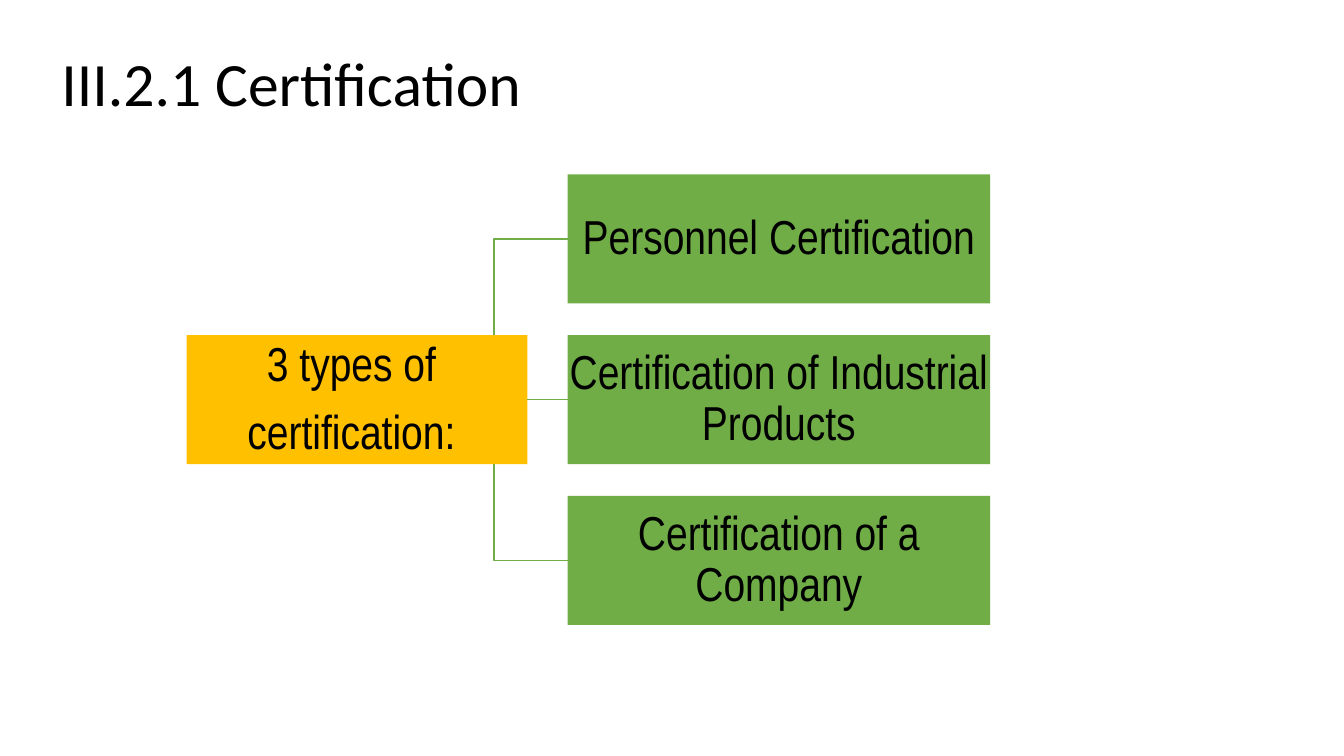
"""Build the certification slide: one root box branching into three types."""
from dataclasses import dataclass

import pptx
import pptx.dml.color
import pptx.enum.shapes
import pptx.enum.text
import pptx.util
from lxml import etree
from pptx.oxml.ns import qn
from pptx.util import Inches


@dataclass(frozen=True)
class Theme:
    """Colours, fonts and type sizes of the slide."""
    ink: str = "000000"
    root: str = "FFC000"
    branch: str = "70AD47"
    title_font: str = "Calibri"
    box_font: str = "Arial Narrow"
    title_size: int = 44
    box_size: int = 34
    line_width: int = 1


THEME = Theme()
BOX_HEIGHT = 1.28
ROOT_LEFT, ROOT_WIDTH = 1.85, 3.38
TYPE_LEFT, TYPE_WIDTH, TYPE_TOP, TYPE_PITCH = 5.63, 4.19, 1.73, 1.595
STEM_LEFT, BEND_LEFT = 4.18, 4.9
ROOT_LINES = ["3 types of ", "certification: "]
TYPES = ["Personnel Certification", "Certification of Industrial Products",
         "Certification of a Company"]


def colour(value):
    """Turn a hex string into a colour."""
    return pptx.dml.color.RGBColor.from_string(value)


def apply(target, values):
    """Set each named attribute on the target."""
    for name, value in values.items():
        setattr(target, name, value)


def write_text(frame, lines, font, size, frame_format, para_format):
    """Fill a text frame with one formatted paragraph per line."""
    apply(frame, {"word_wrap": True, **frame_format})
    for index, line in enumerate(lines):
        para = frame.paragraphs[0] if index == 0 else frame.add_paragraph()
        apply(para, {"alignment": pptx.enum.text.PP_ALIGN.CENTER,
                     "space_before": pptx.util.Pt(0), **para_format})
        span = para.add_run()
        span.text = line
        apply(span.font, {"name": font, "size": pptx.util.Pt(size)})
        span.font.color.rgb = colour(THEME.ink)


def set_title(page, text):
    """Place and format the title placeholder."""
    title = page.shapes.title
    apply(title, {"left": Inches(0.45), "top": Inches(0.34),
                  "width": Inches(5.02), "height": Inches(0.86)})
    write_text(title.text_frame, [text], THEME.title_font, THEME.title_size,
               {"vertical_anchor": pptx.enum.text.MSO_ANCHOR.TOP,
                "auto_size": pptx.enum.text.MSO_AUTO_SIZE.NONE},
               {"line_spacing": 1.07, "space_after": pptx.util.Pt(8)})


def add_box(page, left, top, width, fill, lines):
    """Add a filled box with centred text."""
    box = page.shapes.add_shape(
        pptx.enum.shapes.MSO_SHAPE.RECTANGLE, Inches(left), Inches(top),
        Inches(width), Inches(BOX_HEIGHT))
    box.shadow.inherit = False
    box.fill.solid()
    box.fill.fore_color.rgb = colour(fill)
    box.line.fill.background()
    inset = Inches(0.02)
    write_text(box.text_frame, lines, THEME.box_font, THEME.box_size,
               {"vertical_anchor": pptx.enum.text.MSO_ANCHOR.MIDDLE,
                "margin_left": inset, "margin_right": inset,
                "margin_top": inset, "margin_bottom": inset},
               {"line_spacing": 0.9, "space_after": pptx.util.Pt(12)})
    return box


def format_line(line):
    """Give a line the branch colour and width."""
    line.color.rgb = colour(THEME.branch)
    line.width = pptx.util.Pt(THEME.line_width)


def add_elbow(page, start_y, end_y):
    """Draw a bent branch from the root box to a type box."""
    points = [(BEND_LEFT, start_y), (BEND_LEFT, end_y), (TYPE_LEFT, end_y)]
    builder = page.shapes.build_freeform(Inches(STEM_LEFT), Inches(start_y))
    builder.add_line_segments([(Inches(x), Inches(y)) for x, y in points],
                              close=False)
    elbow = builder.convert_to_shape()
    elbow.shadow.inherit = False
    elbow.fill.background()
    format_line(elbow.line)


def join_boxes(page, start, end):
    """Join the right side of one box to the left side of another."""
    link = page.shapes.add_connector(
        pptx.enum.shapes.MSO_CONNECTOR.STRAIGHT, 0, 0, 0, 0)
    link.begin_connect(start, 3)
    link.end_connect(end, 1)
    format_line(link.line)
    etree.SubElement(link._element.spPr, qn("a:effectLst"))


def main():
    """Build and save the slide."""
    deck = pptx.Presentation()
    apply(deck, {"slide_width": Inches(13.33), "slide_height": Inches(7.5)})
    page = deck.slides.add_slide(deck.slide_layouts[5])
    set_title(page, "III.2.1 Certification ")

    tops = [TYPE_TOP + index * TYPE_PITCH for index in range(len(TYPES))]
    middles = [top + BOX_HEIGHT / 2 for top in tops]
    for end_y in (middles[0], middles[2]):
        add_elbow(page, middles[1], end_y)

    root = add_box(page, ROOT_LEFT, tops[1], ROOT_WIDTH, THEME.root, ROOT_LINES)
    boxes = [add_box(page, TYPE_LEFT, top, TYPE_WIDTH, THEME.branch, [name])
             for top, name in zip(tops, TYPES)]
    join_boxes(page, root, boxes[1])
    deck.save("out.pptx")


if __name__ == "__main__":
    main()
